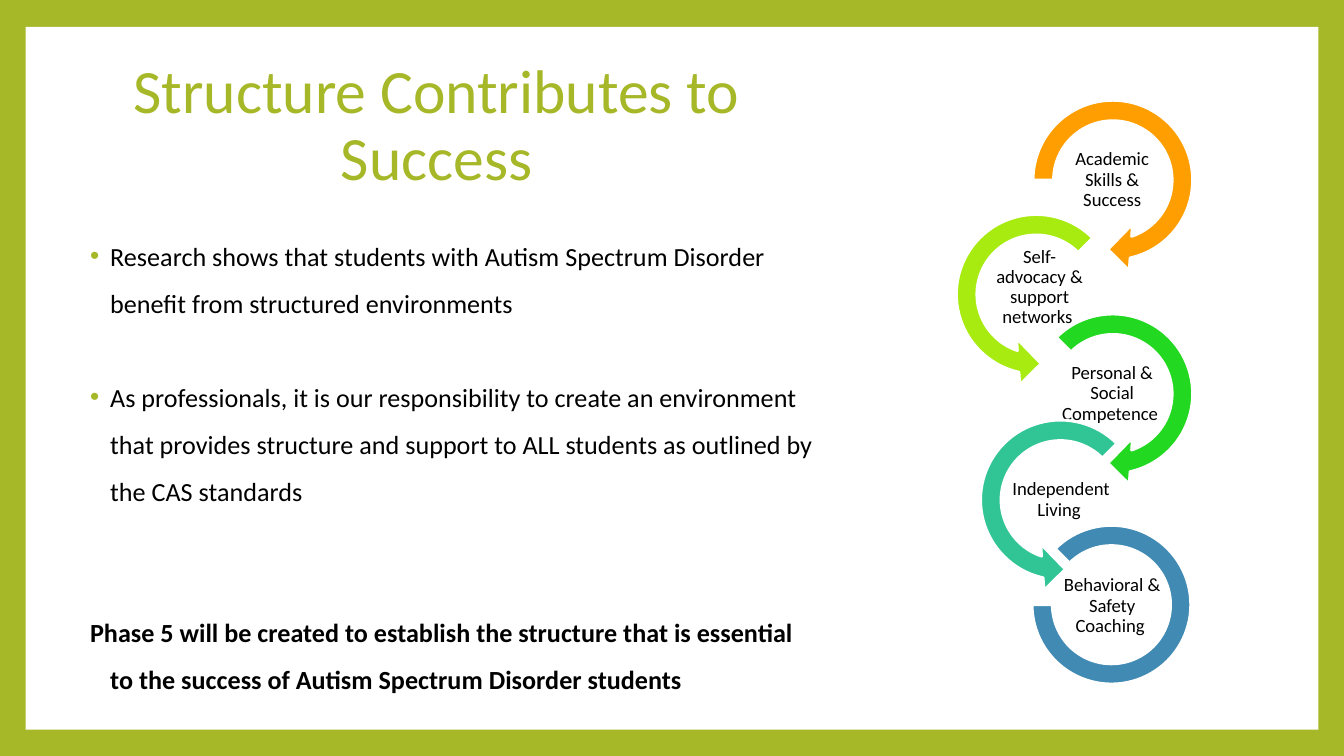
"""Build the slide on how structure contributes to student success."""
from lxml.etree import SubElement
from pptx import Presentation
from pptx.dml.color import RGBColor
from pptx.enum.shapes import MSO_SHAPE as Preset
from pptx.enum.text import MSO_ANCHOR as Anchor, MSO_AUTO_SIZE as AutoSize, PP_ALIGN as Align
from pptx.oxml.ns import qn
from pptx.util import Inches, Pt

COLORS = {
    "olive": "A6B727", "white": "FFFFFF", "black": "000000", "orange": "FE9E00",
    "lime": "A8EB11", "green": "23D821", "teal": "31C595", "blue": "418AB3",
}


def color(name):
    return RGBColor.from_string(COLORS[name])


def format_paragraph(paragraph, size, ink, spacing, before=0, bold=False):
    paragraph.line_spacing = spacing
    paragraph.space_before = Pt(before)
    paragraph.space_after = Pt(0)
    font = paragraph.font
    font.name, font.size, font.bold = "Calibri", Pt(size), bold
    font.color.rgb = color(ink)


presentation = Presentation()
presentation.slide_width = Inches(10)
presentation.slide_height = presentation.slide_width * 9 // 16
slide = presentation.slides.add_slide(presentation.slide_layouts[1])
slide.background.fill.solid()
slide.background.fill.fore_color.rgb = color("olive")
title, body = slide.placeholders

frame = slide.shapes.add_shape(Preset.RECTANGLE, Inches(0.19), Inches(0.2), Inches(9.62), Inches(5.23))
frame.shadow.inherit = False
frame.fill.solid()
frame.fill.fore_color.rgb = color("white")
frame.line.fill.background()
title._element.addprevious(frame._element)

for placeholder, box, top_inset, right_inset in (
    (title, (0.35, 0.35, 5.8, 0.83), 0.1, 0.1),
    (body, (0.53, 0.99, 5.62, 4.31), 0.68, 0.08),
):
    placeholder.left, placeholder.top, placeholder.width, placeholder.height = map(Inches, box)
    text_frame = placeholder.text_frame
    text_frame.auto_size = AutoSize.NONE
    text_frame.word_wrap = True
    text_frame.vertical_anchor = Anchor.TOP
    text_frame.margin_left = text_frame.margin_bottom = Inches(0.1)
    text_frame.margin_top = Inches(top_inset)
    text_frame.margin_right = Inches(right_inset)

title.text_frame.text = "Structure Contributes to Success"
title_paragraph = title.text_frame.paragraphs[0]
title_paragraph.alignment = Align.CENTER
format_paragraph(title_paragraph, 33, "olive", 0.9)

points = [
    ("Research shows that students with Autism Spectrum Disorder benefit from structured environments", 0, True),
    ("As professionals, it is our responsibility to create an environment that provides structure "
     "and support to ALL students as outlined by the CAS standards", 25.2, True),
    ("Phase 5 will be created to establish the structure that is essential to the success of "
     "Autism Spectrum Disorder students", 50.4, False),
]
body.text_frame.text = "\n".join(text for text, before, bulleted in points)
for paragraph, (text, before, bulleted) in zip(body.text_frame.paragraphs, points):
    properties = paragraph._p.get_or_add_pPr()
    properties.set("marL", str(Inches(0.19)))
    properties.set("indent", str(Inches(-0.15)))
    if bulleted:
        bullet_color = SubElement(properties, qn("a:buClr"))
        SubElement(bullet_color, qn("a:srgbClr"), val=COLORS["olive"])
        SubElement(properties, qn("a:buFont"), typeface="Arial")
        SubElement(properties, qn("a:buChar"), char="•")
    else:
        SubElement(properties, qn("a:buNone"))
    format_paragraph(paragraph, 14, "black", 1.5, before, bold=not bulleted)

right_start = (0.11, 11.423, 45, 108, 0.125)
right_next = (0.11, 11.423, 45, 135, 0.125)
left_turn = (0.11, 11.423, 63, 189, 0.125)
closing_arc = (135, 108, 0.127)
steps = [
    ("Academic Skills & Success", Preset.CIRCULAR_ARROW, right_start, "orange", (7.59, 0.65, 1.38), (7.89, 1.15)),
    ("Self-advocacy & support networks ", Preset.LEFT_CIRCULAR_ARROW, left_turn, "lime", (7.02, 1.5, 1.38), (7.35, 1.95)),
    ("Personal & Social Competence ", Preset.CIRCULAR_ARROW, right_next, "green", (7.59, 2.24, 1.38), (7.89, 2.74)),
    ("Independent Living ", Preset.LEFT_CIRCULAR_ARROW, left_turn, "teal", (7.2, 3.03, 1.38), (7.51, 3.53)),
    ("Behavioral & Safety Coaching ", Preset.BLOCK_ARC, closing_arc, "blue", (7.68, 3.91, 1.18), (7.89, 4.32)),
]
for text, preset, adjustments, fill, (left, top, size), (label_left, label_top) in steps:
    ring = slide.shapes.add_shape(preset, Inches(left), Inches(top), Inches(size), Inches(size))
    for index, value in enumerate(adjustments):
        ring.adjustments[index] = value
    ring.shadow.inherit = False
    ring.fill.solid()
    ring.fill.fore_color.rgb = color(fill)
    ring.line.color.rgb = color("white")
    ring.line.width = Pt(1.5)

    label = slide.shapes.add_textbox(Inches(label_left), Inches(label_top), Inches(0.77), Inches(0.38))
    text_frame = label.text_frame
    text_frame.word_wrap = True
    text_frame.vertical_anchor = Anchor.MIDDLE
    text_frame.margin_left = text_frame.margin_right = Inches(0.01)
    text_frame.margin_top = text_frame.margin_bottom = Inches(0.01)
    text_frame.text = text
    label_paragraph = text_frame.paragraphs[0]
    label_paragraph.alignment = Align.CENTER
    format_paragraph(label_paragraph, 10, "black", 0.9)

presentation.save("out.pptx")
